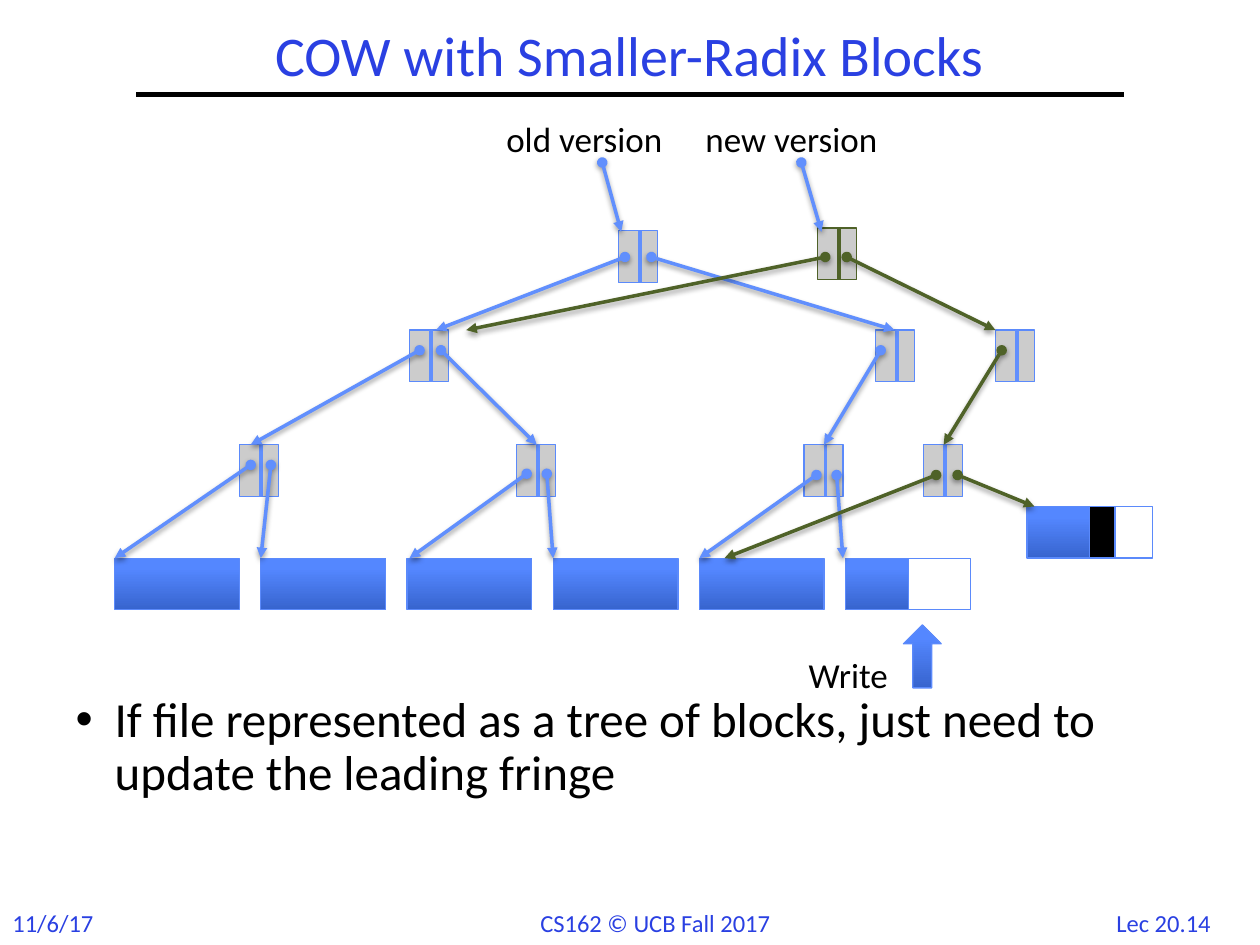
from copy import deepcopy
from typing import NamedTuple

from lxml.etree import SubElement
from pptx import Presentation
from pptx.dml.color import RGBColor
from pptx.enum.shapes import MSO_CONNECTOR as Conn, MSO_SHAPE as Shape
from pptx.enum.text import MSO_ANCHOR as Anchor, MSO_AUTO_SIZE as Auto, PP_ALIGN as Align
from pptx.oxml.ns import qn
from pptx.util import Inches, Pt

COLORS = {
    "title": "2A40E2", "text": "000000", "white": "FFFFFF", "written": "000000",
    "node": "CCCCCC", "border": "5B8AFB", "old": "618FFD", "new": "4F6228",
    "dark": "3764CE", "mid": "5487FF", "light": "5688FF",
}
FONT = "Calibri"

prs = Presentation()
prs.slide_width, prs.slide_height = Inches(10), Inches(7.5)
s = prs.slides.add_slide(prs.slide_layouts[1])

# Grid of 10 columns by 7.5 rows
UNIT = prs.slide_width / 10
NODE_W, BLOCK_H = 0.31, 0.41
LEAF_X, LEAF_Y, LEAF_W, LEAF_STEP = 0.91, 4.43, 0.99, 1.16
ROOT_Y, MID_Y, LOW_Y = 1.83, 2.62, 3.53


class Node(NamedTuple):
    x: float
    y: float
    border: str = "border"
    divider: str = "old"


class Arrow(NamedTuple):
    x1: float
    y1: float
    x2: float
    y2: float
    color: str = "old"


class Label(NamedTuple):
    text: str
    x: float
    y: float
    w: float
    h: float = 0.44
    size: int = 20
    color: str = "text"
    align: Align = Align.LEFT


NODES = [
    Node(4.91, ROOT_Y), Node(6.49, ROOT_Y - 0.02, "new", "new"),
    *(Node(x, MID_Y) for x in (3.25, 6.95, 7.9)),
    *(Node(x, LOW_Y) for x in (1.9, 4.1, 6.38, 7.33)),
]
ARROWS = [
    # Old tree
    Arrow(4.96, 2.04, 3.46, MID_Y), Arrow(5.17, 2.04, 7.1, MID_Y),
    Arrow(3.33, 2.78, 1.99, LOW_Y), Arrow(3.5, 2.78, 4.26, LOW_Y),
    Arrow(6.99, 2.78, 6.54, LOW_Y),
    Arrow(1.99, 3.69, 0.91, LEAF_Y), Arrow(2.15, 3.69, 2.07, LEAF_Y),
    Arrow(4.18, 3.76, 3.25, LEAF_Y), Arrow(4.34, 3.76, 4.39, LEAF_Y),
    Arrow(6.48, 3.77, 5.55, LEAF_Y), Arrow(6.64, 3.77, 6.69, LEAF_Y),
    # New fringe
    Arrow(7.95, 2.78, 7.49, LOW_Y, "new"), Arrow(7.43, 3.77, 5.75, LEAF_Y, "new"),
    Arrow(7.6, 3.77, 8.21, 4.02, "new"), Arrow(6.55, 2.04, 3.7, MID_Y, "new"),
    Arrow(6.72, 2.04, 7.9, MID_Y, "new"),
    # Version pointers
    Arrow(4.78, 1.29, 4.93, 1.84), Arrow(6.36, 1.29, 6.52, 1.84),
]
LABELS = [
    Label("old version", 3.92, 0.88, 1.47), Label("new version", 5.5, 0.88, 1.58),
    Label("Write", 6.32, 5.14, 0.97),
    Label("11/6/17", 0, 7.16, 1, 0.34, 14, "title"),
    Label("CS162 © UCB Fall 2017", 4.19, 7.16, 2.13, 0.34, 14, "title"),
    Label("Lec 20.14", 8.72, 7.16, 1.03, 0.34, 14, "title", Align.CENTER),
]


def grid(*cells: float) -> list[int]:
    return [round(c * UNIT) for c in cells]


def rgb(name: str) -> RGBColor:
    return RGBColor.from_string(COLORS[name])


def add_run(p, text: str, size: int, color: str) -> None:
    r = p.add_run()
    r.text = text
    r.font.name, r.font.size = FONT, Pt(size)
    r.font.color.rgb = rgb(color)


def fill_gradient(sp) -> None:
    sp.fill.gradient()
    sp.fill.gradient_angle = 90
    for stop, name in zip(sp.fill.gradient_stops, ("dark", "mid")):
        stop.color.rgb = rgb(name)
    stops = sp._element.spPr.find(qn("a:gradFill")).find(qn("a:gsLst"))
    stops[1].set("pos", "80000")
    stops.append(deepcopy(stops[1]))
    last = sp.fill.gradient_stops[2]
    last.position, last.color.rgb = 1.0, rgb("light")


def add_block(x: float, y: float, w: float, h: float = BLOCK_H, fill: str = "",
              border: str = "border", kind: Shape = Shape.RECTANGLE) -> None:
    sp = s.shapes.add_shape(kind, *grid(x, y, w, h))
    sp.shadow.inherit = False
    if fill:
        sp.fill.solid()
        sp.fill.fore_color.rgb = rgb(fill)
    else:
        fill_gradient(sp)
    sp.line.color.rgb, sp.line.width = rgb(border), Pt(0.75)


def add_line(a: Arrow, width: float = 2, arrow: bool = False) -> None:
    cx = s.shapes.add_connector(Conn.STRAIGHT, *grid(a.x1, a.y1, a.x2, a.y2))
    cx.line.color.rgb, cx.line.width = rgb(a.color), Pt(width)
    pr = cx._element.spPr
    effects = SubElement(pr, qn("a:effectLst"))
    if arrow:
        ln = pr.find(qn("a:ln"))
        SubElement(ln, qn("a:headEnd"), type="oval")
        SubElement(ln, qn("a:tailEnd"), type="triangle")
        shadow = SubElement(effects, qn("a:outerShdw"), blurRad=str(Pt(3.1)),
                            dist=str(Pt(1.6)), dir="5400000", rotWithShape="0")
        color = SubElement(shadow, qn("a:srgbClr"), val="000000")
        SubElement(color, qn("a:alpha"), val="38000")


def add_node(n: Node) -> None:
    add_block(n.x, n.y, NODE_W, fill="node", border=n.border)
    mid = n.x + 0.17
    add_line(Arrow(mid, n.y, mid, n.y + BLOCK_H, n.divider))


def add_label(b: Label) -> None:
    tf = s.shapes.add_textbox(*grid(b.x, b.y, b.w, b.h)).text_frame
    tf.word_wrap, tf.auto_size = False, Auto.SHAPE_TO_FIT_TEXT
    p = tf.paragraphs[0]
    p.alignment = b.align
    add_run(p, b.text, b.size, b.color)


def fill_placeholder(sp, box: tuple, text: str, size: int, color: str, anchor: Anchor):
    sp.left, sp.top, sp.width, sp.height = grid(*box)
    tf = sp.text_frame
    tf.vertical_anchor, tf.auto_size, tf.word_wrap = anchor, Auto.NONE, True
    p = tf.paragraphs[0]
    p.line_spacing = 0.9
    add_run(p, text, size, color)
    return p


# Title and rule
p = fill_placeholder(s.shapes.title, (1.08, 0.17, 7.83, 0.58),
                     "COW with Smaller-Radix Blocks", 32, "title", Anchor.MIDDLE)
p.alignment = Align.CENTER
add_line(Arrow(1.08, 0.75, 8.92, 0.75, "text"), width=3)

# Bullet
p = fill_placeholder(
    s.placeholders[1], (0.5, 5.47, 9, 1.43),
    "If file represented as a tree of blocks, just need to update the leading fringe",
    28, "text", Anchor.TOP)
p.space_before = Pt(8.4)
pPr = p._p.get_or_add_pPr()
pPr.set("marL", str(Inches(0.31)))
pPr.set("indent", str(-Inches(0.31)))
SubElement(pPr, qn("a:buChar"), char="•")

# Data blocks, the last one half empty
for i in range(6):
    add_block(LEAF_X + i * LEAF_STEP, LEAF_Y, LEAF_W)
add_block(7.21, LEAF_Y, LEAF_W / 2, fill="white")

# New copy of the last block, with the written part
add_block(8.15, 4.02, LEAF_W)
add_block(8.65, 4.02, LEAF_W / 2, fill="white")
add_block(8.65, 4.02, 0.2, fill="written")

# Write marker
add_block(7.17, 4.96, 0.3, 0.5, kind=Shape.UP_ARROW)

# Tree and captions
for node in NODES:
    add_node(node)
for link in ARROWS:
    add_line(link, arrow=True)
for label in LABELS:
    add_label(label)

prs.save("out.pptx")
